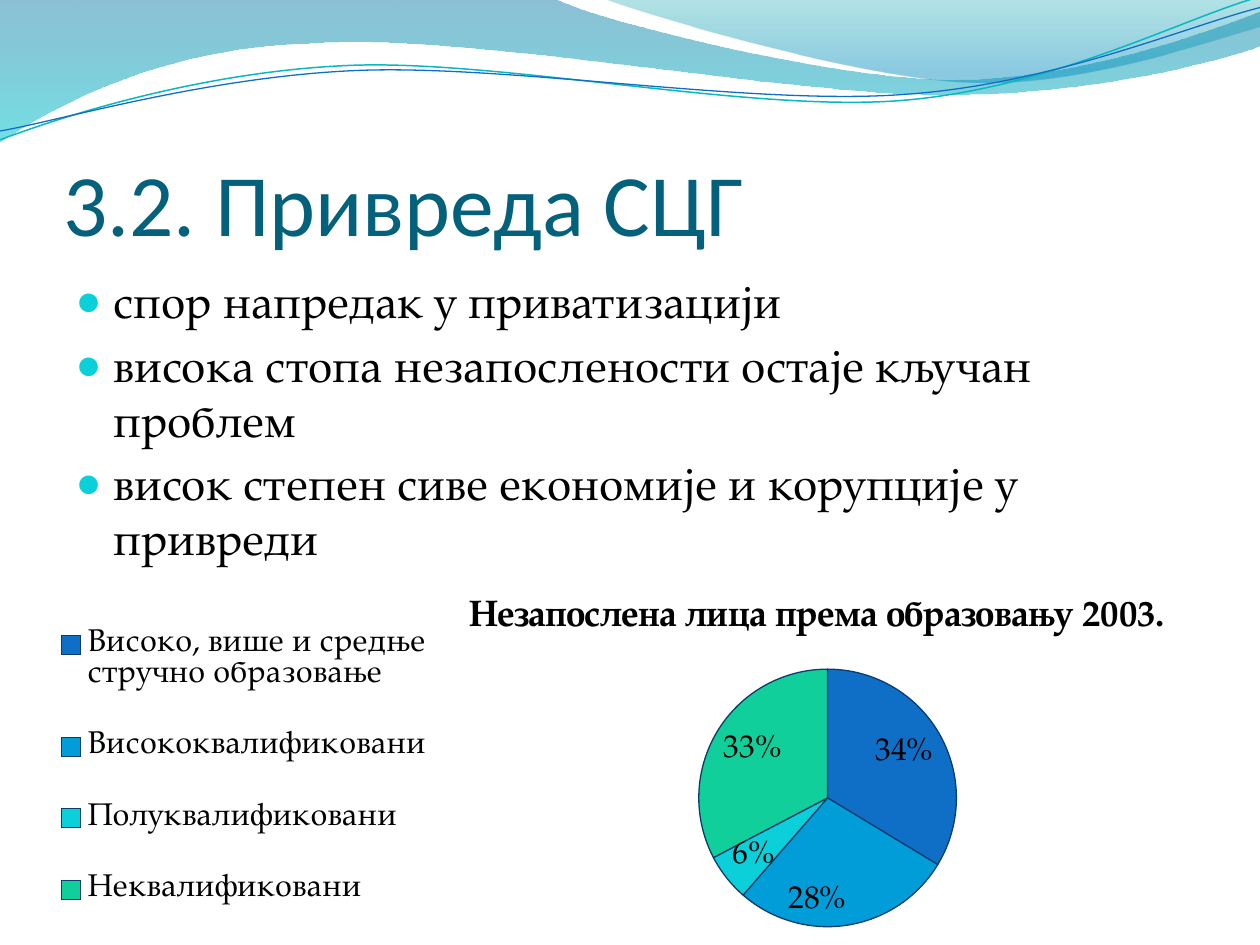
from dataclasses import dataclass
from typing import Optional

from lxml.etree import SubElement
from pptx import Presentation
from pptx.chart.data import CategoryChartData
from pptx.dml.color import RGBColor
from pptx.enum.chart import XL_CHART_TYPE as ChartType
from pptx.enum.chart import XL_LABEL_POSITION as LabelPos
from pptx.enum.chart import XL_LEGEND_POSITION as LegendPos
from pptx.enum.text import MSO_ANCHOR, MSO_AUTO_SIZE, PP_ALIGN
from pptx.oxml import parse_xml
from pptx.oxml.ns import nsdecls, qn
from pptx.util import Inches, Pt

TEAL = RGBColor(0x04, 0x61, 0x7B)
BLACK = RGBColor(0, 0, 0)
BLUE = RGBColor(0x0F, 0x6F, 0xC6)
SKY = RGBColor(0x00, 0x9D, 0xD9)
CYAN = RGBColor(0x0B, 0xD0, 0xD9)
GREEN = RGBColor(0x10, 0xCF, 0x9B)
LINE_TEAL = RGBColor(0x0A, 0xB8, 0xBF)
SLICE_EDGE = RGBColor(0x0B, 0x3C, 0x6D)
WAVE_BLUE = RGBColor(0x00, 0x74, 0xA1)
WAVE_CYAN = RGBColor(0x00, 0xC6, 0xCF)
WAVE_TEAL = RGBColor(0x00, 0xA1, 0xA9)
WAVE_SKY = RGBColor(0x00, 0x8B, 0xBF)
HEAD_FONT, BODY_FONT = "Calibri", "TeX Gyre Pagella"


@dataclass
class Stop:
    position: float
    color: RGBColor
    opacity: int


@dataclass
class Wave:
    """Segments hold one point for a line, three for a Bezier curve."""
    start: tuple
    segments: list
    stops: Optional[list] = None
    line: Optional[RGBColor] = None
    width: float = 0


WAVES = [
    Wave((0, 0), [
        [(4.4, -0.01)],
        [(4.76, 0.17), (6.64, 0.63), (7.58, 0.63)],
        [(8.53, 0.63), (9.58, 0.26), (10, 0.09)],
        [(10.01, 0.36)],
        [(9.83, 0.44), (8.7, 0.76), (7.46, 0.75)],
        [(6.22, 0.75), (3.82, 0.28), (2.57, 0.34)],
        [(1.29, 0.36), (0.46, 0.83), (-0.01, 1.13)],
    ], stops=[Stop(0, WAVE_BLUE, 45), Stop(1, WAVE_CYAN, 55)]),
    Wave((4.79, -0.01), [
        [(5.09, 0.11), (6.82, 0.62), (7.69, 0.65)],
        [(8.56, 0.69), (9.61, 0.32), (10, 0.21)],
        [(10, 0)],
    ], stops=[Stop(0, WAVE_TEAL, 30), Stop(0.8, WAVE_SKY, 45)]),
    Wave((0, 1.11), [
        [(0.48, 0.93), (1.58, 0.57), (2.77, 0.52)],
        [(3.95, 0.47), (5.93, 0.89), (7.13, 0.8)],
        [(8.33, 0.71), (9.38, 0.15), (9.98, -0.02)],
    ], line=LINE_TEAL, width=0.85),
    Wave((0, 1.04), [
        [(0.47, 0.96), (1.64, 0.61), (2.83, 0.56)],
        [(4.03, 0.51), (5.97, 0.84), (7.17, 0.75)],
        [(8.36, 0.67), (9.41, 0.21), (10, 0.06)],
    ], line=BLUE, width=0.75),
]

BULLETS = [
    "спор напредак у приватизацији",
    "висока стопа незапослености остаје кључан проблем",
    "висок степен сиве економије и корупције у привреди",
]
SLICES = [
    ("Високо, више и средње стручно образовање", 34, BLUE),
    ("Висококвалификовани", 28, SKY),
    ("Полуквалификовани", 6, CYAN),
    ("Неквалификовани", 33, GREEN),
]


def bend(s, segments: list) -> None:
    """Turn each run of three lines that stands for a curve into a Bezier."""
    lines = iter(list(s._element.iter(qn("a:lnTo"))))
    for seg in segments:
        parts = [next(lines) for _ in seg]
        if len(parts) == 3:
            curve = parse_xml(f'<a:cubicBezTo {nsdecls("a")}/>')
            parts[0].addprevious(curve)
            for part in parts:
                curve.append(part[0])
                part.getparent().remove(part)


def draw_wave(slide, wave: Wave) -> None:
    builder = slide.shapes.build_freeform(*map(Inches, wave.start))
    builder.add_line_segments([(Inches(x), Inches(y)) for seg in wave.segments for x, y in seg],
                              close=False)
    s = builder.convert_to_shape()
    bend(s, wave.segments)
    s.shadow.inherit = False
    if wave.stops is None:
        s.fill.background()
        s.line.color.rgb = wave.line
        s.line.width = Pt(wave.width)
        return
    outline = next(s._element.iter(qn("a:pathLst")))[0]
    SubElement(outline, qn("a:close"))
    s.line.fill.background()
    s.fill.gradient()
    s.fill.gradient_angle = 270
    for gs, stop in zip(s.fill.gradient_stops, wave.stops):
        gs.position = stop.position
        gs.color.rgb = stop.color
    for clr, stop in zip(s._element.spPr.iter(qn("a:srgbClr")), wave.stops):
        SubElement(clr, qn("a:alpha"), val=str(stop.opacity * 1000))


def place(sp, left: float, top: float, width: float, height: float) -> None:
    sp.left, sp.top, sp.width, sp.height = map(Inches, (left, top, width, height))


def add_run(p, text: str, font: str, size: float, color: RGBColor, bold: bool = False) -> None:
    r = p.add_run()
    r.text = text
    r.font.name, r.font.size, r.font.bold = font, Pt(size), bold
    r.font.color.rgb = color


def set_bullet(p) -> None:
    pPr = p._p.get_or_add_pPr()
    pPr.set("marL", str(Inches(0.3)))
    pPr.set("indent", str(Inches(-0.3)))
    for xml in ('<a:spcBef %s><a:spcPct val="20000"/></a:spcBef>',
                f'<a:buClr %s><a:srgbClr val="{CYAN}"/></a:buClr>',
                '<a:buSzPct %s val="95000"/>',
                '<a:buChar %s char="●"/>'):
        pPr.append(parse_xml(xml % nsdecls("a")))


def set_layout(element, index: int, target: str = "", **fractions: float) -> None:
    """Pin a chart part at fractions of the chart area."""
    for old in element.findall(qn("c:layout")):
        element.remove(old)
    layout = parse_xml(f'<c:layout {nsdecls("c")}><c:manualLayout/></c:layout>')
    manual = layout[0]
    if target:
        SubElement(manual, qn("c:layoutTarget"), val=target)
    for name in ("x", "y"):
        SubElement(manual, qn(f"c:{name}Mode"), val="edge")
    for name, value in fractions.items():
        SubElement(manual, qn(f"c:{name}"), val=str(value))
    element.insert(index, layout)


def add_pie(slide) -> None:
    data = CategoryChartData()
    data.categories = [name for name, _, _ in SLICES]
    data.add_series("Series 1", [value for _, value, _ in SLICES])
    chart = slide.shapes.add_chart(ChartType.PIE, Inches(0.2), Inches(4.62),
                                   Inches(9.65), Inches(2.88), data).chart
    chart.font.name, chart.font.size = BODY_FONT, Pt(18)
    chart.font.color.rgb = BLACK

    # Title and legend
    chart.has_title = True
    add_run(chart.chart_title.text_frame.paragraphs[0],
            "Незапослена лица према образовању 2003.", BODY_FONT, 21, BLACK, bold=True)
    set_layout(chart.chart_title._element, 1, x=0.36, y=0.02)
    chart.has_legend = True
    chart.legend.position = LegendPos.LEFT
    chart.legend.include_in_layout = False
    set_layout(chart.legend._element, 1, x=0.02, y=0.02, w=0.32, h=0.98)

    # Slices and percentages
    plot = chart.plots[0]
    plot.vary_by_categories = True
    set_layout(chart._chartSpace.chart.plotArea, 0, "inner", x=0.55, y=0.24, w=0.22, h=0.71)
    for i, (_, _, color) in enumerate(SLICES):
        fmt = plot.series[0].points[i].format
        fmt.fill.solid()
        fmt.fill.fore_color.rgb = color
        fmt.line.color.rgb = SLICE_EDGE
        fmt.line.width = Pt(0.75)
    plot.has_data_labels = True
    labels = plot.data_labels
    labels.show_percentage, labels.show_value = True, False
    labels.number_format, labels.number_format_is_linked = "0%", False
    labels.position = LabelPos.INSIDE_END


def main() -> None:
    prs = Presentation()
    prs.slide_width, prs.slide_height = Inches(10), Inches(7.5)
    slide = prs.slides.add_slide(prs.slide_layouts[1])
    title, body = slide.placeholders

    # Waves along the top
    for wave in WAVES:
        draw_wave(slide, wave)

    # Title
    place(title, 0.5, 0.77, 9, 1.25)
    tf = title.text_frame
    tf.auto_size = MSO_AUTO_SIZE.NONE
    tf.vertical_anchor = MSO_ANCHOR.BOTTOM
    tf.margin_left = tf.margin_right = tf.margin_bottom = 0
    tf.paragraphs[0].alignment = PP_ALIGN.LEFT
    add_run(tf.paragraphs[0], "3.2. Привреда СЦГ", HEAD_FONT, 50, TEAL)

    # Bullet list
    place(body, 0.5, 2.12, 9, 4.8)
    tf = body.text_frame
    tf.auto_size = MSO_AUTO_SIZE.NONE
    for i, text in enumerate(BULLETS):
        p = tf.add_paragraph() if i else tf.paragraphs[0]
        set_bullet(p)
        add_run(p, text, BODY_FONT, 26, BLACK)

    add_pie(slide)
    prs.save("out.pptx")


if __name__ == "__main__":
    main()
